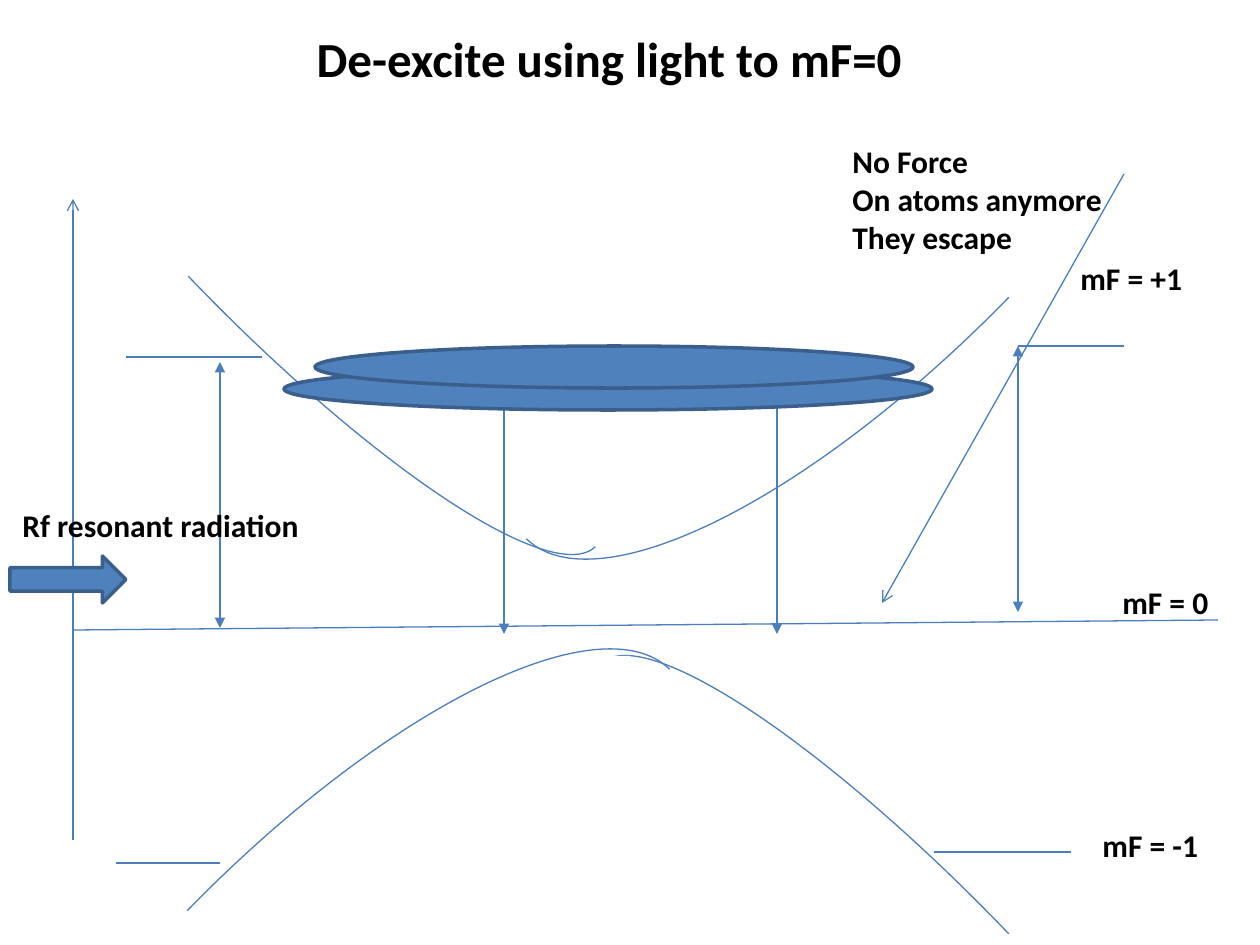
from lxml import etree
from pptx import Presentation
from pptx import util as u
from pptx.dml.color import RGBColor
from pptx.enum import shapes, text
from pptx.oxml.ns import qn

PX = 914400 / 126
LINE, FILL, EDGE = "4B7EBC", "4F81BD", "3A5F8C"
BLACK, WHITE = "000000", "FFFFFF"
KIND = shapes.MSO_SHAPE


def px(*lengths):
    return [u.Emu(round(length * PX)) for length in lengths]


def color(value):
    return RGBColor.from_string(value)


def add_text(page, words, area, size=18, align=text.PP_ALIGN.LEFT, wrap=False):
    box = page.shapes.add_textbox(*px(*area))
    frame = box.text_frame
    frame.word_wrap = wrap
    frame.vertical_anchor = text.MSO_ANCHOR.MIDDLE if wrap else text.MSO_ANCHOR.TOP
    for index, words_line in enumerate(words.split("\n")):
        para = frame.paragraphs[0] if index == 0 else frame.add_paragraph()
        para.alignment = align
        span = para.add_run()
        span.text = words_line
        span.font.name, span.font.size, span.font.bold = "Calibri", u.Pt(size), True
        span.font.color.rgb = color(BLACK)


def add_line(page, start, end, head=None, tail=None):
    line = page.shapes.add_connector(shapes.MSO_CONNECTOR.STRAIGHT, *px(*start, *end))
    line.line.color.rgb = color(LINE)
    line.line.width = u.Pt(0.75)
    properties = line._element.spPr
    for tag, kind in (("a:headEnd", head), ("a:tailEnd", tail)):
        if kind:
            etree.SubElement(properties.get_or_add_ln(), qn(tag), type=kind)
    etree.SubElement(properties, qn("a:effectLst"))


def add_shape(page, kind, area, fill=None, edge=None, width=2):
    shape = page.shapes.add_shape(kind, *px(*area))
    shape.shadow.inherit = False
    if fill:
        shape.fill.solid()
        shape.fill.fore_color.rgb = color(fill)
    else:
        shape.fill.background()
    if edge:
        shape.line.color.rgb = color(edge)
        shape.line.width = u.Pt(width)
    else:
        shape.line.fill.background()
    return shape


def add_arc(page, area, angle, mirrored=False):
    arc = add_shape(page, KIND.ARC, area, edge=LINE, width=0.75)
    arc.rotation = angle
    if mirrored:
        arc._element.spPr.xfrm.set("flipH", "1")


def main():
    deck = Presentation()
    deck.slide_width, deck.slide_height = px(1260, 945)
    page = deck.slides.add_slide(deck.slide_layouts[6])

    add_text(page, "De-excite using light to mF=0", (42, -21, 1134, 158),
             size=28, align=text.PP_ALIGN.CENTER, wrap=True)

    # Energy axis and the flat mF = 0 level
    add_line(page, (73, 840), (73, 199), tail="arrow")
    add_line(page, (73, 630), (1218, 620))

    # Level marks of the upper and lower potentials
    for left, right, y in ((126, 262, 357), (1018, 1124, 346),
                           (934, 1071, 852), (116, 220, 863)):
        add_line(page, (left, y), (right, y))

    # Trapping curve above, anti-trapping curve below
    add_arc(page, (372, -4, 1019, 355), 134.2)
    add_arc(page, (-212, 96, 954, 213), 226.2, mirrored=True)
    add_arc(page, (-195, 857, 1019, 355), 314.2)
    add_arc(page, (455, 901, 954, 213), 46.2, mirrored=True)
    add_shape(page, KIND.RECTANGLE, (577, 656, 53, 27), fill=WHITE)

    # Level names
    for name, left, top, width in (("mF = +1", 1068, 253, 129),
                                   ("mF = -1", 1090, 820, 122),
                                   ("mF = 0", 1110, 577, 112)):
        add_text(page, name, (left, top, width, 50))

    # Transitions down to mF = 0
    for x, top in ((220, 362), (504, 368), (777, 368), (1018, 346)):
        add_line(page, (x, top), (x, top + 266), head="triangle", tail="triangle")

    # Incoming radiation
    add_text(page, "Rf resonant radiation", (10, 500, 304, 50))
    add_shape(page, KIND.RIGHT_ARROW, (10, 556, 116, 47), FILL, EDGE)

    # Escaping atoms
    add_line(page, (1124, 174), (882, 603), tail="arrow")
    add_text(page, "No Force\nOn atoms anymore\nThey escape", (840, 136, 277, 127))

    # Atom cloud
    for area in ((284, 368, 648, 42), (315, 346, 598, 42)):
        add_shape(page, KIND.OVAL, area, FILL, EDGE)

    deck.save("out.pptx")


if __name__ == "__main__":
    main()
